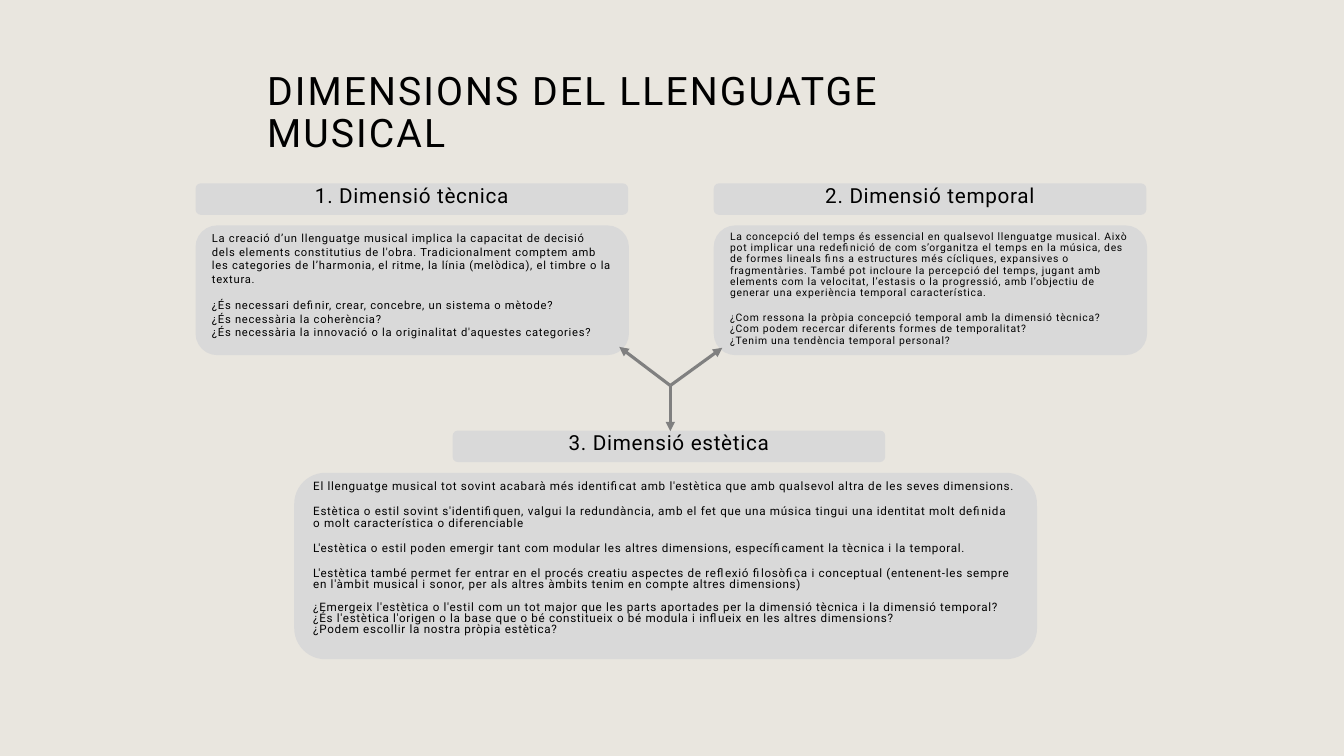
from dataclasses import dataclass

from pptx import Presentation, util as u
from pptx.dml.color import RGBColor
from pptx.enum import shapes, text
from pptx.oxml.ns import qn
from lxml import etree


@dataclass(frozen=True)
class Theme:
    back: str = "E9E6DF"
    card: str = "D9D9D9"
    ink: str = "000000"
    arrow: str = "808080"
    font: str = "Roboto"
    title: float = 28
    head: float = 14.8
    tech: float = 8
    time: float = 7.4
    style: float = 8.3


THEME = Theme()
LEFT, CENTER = text.PP_ALIGN.LEFT, text.PP_ALIGN.CENTER


def write(frame, words, size, first=False, align=LEFT, lead=1.0, gap=0, track=0.5):
    """Add one paragraph to a text frame."""
    para = frame.paragraphs[0] if first else frame.add_paragraph()
    para.alignment, para.line_spacing = align, lead
    para.space_before, para.space_after = u.Pt(gap), u.Pt(0)
    props = para._p.get_or_add_pPr()
    props.set("marL", "0")
    props.set("indent", "0")
    etree.SubElement(props, qn("a:buNone"))
    run = para.add_run()
    run.text = words
    run.font.name, run.font.size, run.font.bold = THEME.font, u.Pt(size), False
    run.font.color.rgb = RGBColor.from_string(THEME.ink)
    run._r.get_or_add_rPr().set("spc", str(round(track * 100)))


@dataclass
class Board:
    slide: object
    theme: Theme = THEME

    def place(self, shape, box):
        shape.left, shape.top, shape.width, shape.height = map(u.Pt, box)

    def frame(self, shape, anchor, top=3.6):
        frame = shape.text_frame
        frame.word_wrap = True
        frame.auto_size = text.MSO_AUTO_SIZE.NONE
        frame.vertical_anchor = anchor
        frame.margin_left = frame.margin_right = u.Pt(7.2)
        frame.margin_top, frame.margin_bottom = u.Pt(top), u.Pt(3.6)
        return frame

    def title(self, words, box):
        shape = self.slide.shapes.title
        self.place(shape, box)
        frame = self.frame(shape, text.MSO_ANCHOR.MIDDLE)
        write(frame, words, self.theme.title, first=True, lead=0.9, track=1.5)

    def card(self, box, slot=None, top=3.6):
        """Round a placeholder, or draw a new rounded shape."""
        if slot is None:
            kind = shapes.MSO_SHAPE.ROUNDED_RECTANGLE
            shape = self.slide.shapes.add_shape(kind, *map(u.Pt, box))
            shape.shadow.inherit = False
        else:
            shape = self.slide.placeholders[slot]
            self.place(shape, box)
            form = etree.SubElement(shape._element.spPr, qn("a:prstGeom"), prst="roundRect")
            etree.SubElement(form, qn("a:avLst"))
        shape.fill.solid()
        shape.fill.fore_color.rgb = RGBColor.from_string(self.theme.card)
        shape.line.fill.background()
        return self.frame(shape, text.MSO_ANCHOR.TOP, top)

    def head(self, words, box, slot=None):
        write(self.card(box, slot), words, self.theme.head,
              first=True, align=CENTER, lead=0.7, gap=10)

    def body(self, lines, box, size, lead, slot=None):
        """Fill a card with (gap before, words) pairs."""
        frame = self.card(box, slot, top=0)
        for i, (gap, words) in enumerate(lines):
            write(frame, words, size, first=i == 0, lead=lead, gap=gap)

    def arrow(self, start, end):
        line = self.slide.shapes.add_connector(
            shapes.MSO_CONNECTOR.STRAIGHT, *map(u.Pt, (*start, *end)))
        line.line.width = u.Pt(2.25)
        line.line.color.rgb = RGBColor.from_string(self.theme.arrow)
        etree.SubElement(line.line._get_or_add_ln(), qn("a:tailEnd"), type="triangle")
        etree.SubElement(line._element.spPr, qn("a:effectLst"))


# Wording
TECH = [
    (10, "La creació d’un llenguatge musical implica la capacitat de decisió dels elements "
         "constitutius de l'obra. Tradicionalment comptem amb les categories de l’harmonia, "
         "el ritme, la línia (melòdica), el timbre o la textura."),
    (9.4, "¿És necessari definir, crear, concebre, un sistema o mètode?"),
    (0, "¿És necessària la coherència?"),
    (0, "¿És necessària la innovació o la originalitat d'aquestes categories?"),
]
TIME = [
    (10, "La concepció del temps és essencial en qualsevol llenguatge musical. Això pot "
         "implicar una redefinició de com s’organitza el temps en la música, des de formes "
         "lineals fins a estructures més cícliques, expansives o fragmentàries. També pot "
         "incloure la percepció del temps, jugant amb elements com la velocitat, l’estasis o "
         "la progressió, amb l’objectiu de generar una experiència temporal característica."),
    (10, "¿Com ressona la pròpia concepció temporal amb la dimensió tècnica?"),
    (0, "¿Com podem recercar diferents formes de temporalitat?"),
    (0, "¿Tenim una tendència temporal personal?"),
]
STYLE = [
    (10, "El llenguatge musical tot sovint acabarà més identificat amb l'estètica que amb "
         "qualsevol altra de les seves dimensions."),
    (10, "Estètica o estil sovint s'identifiquen, valgui la redundància, amb el fet que una "
         "música tingui una identitat molt definida o molt característica o diferenciable"),
    (10, "L'estètica o estil poden emergir tant com modular les altres dimensions, "
         "específicament la tècnica i la temporal."),
    (10, "L'estètica també permet fer entrar en el procés creatiu aspectes de reflexió "
         "filosòfica i conceptual (entenent-les sempre en l'àmbit musical i sonor, per als "
         "altres àmbits tenim en compte altres dimensions)"),
    (8, "¿Emergeix l'estètica o l'estil com un tot major que les parts aportades per la "
        "dimensió tècnica i la dimensió temporal?"),
    (0, "¿És l'estètica l'origen o la base que o bé constitueix o bé modula i influeix en "
        "les altres dimensions?"),
    (0, "¿Podem escollir la nostra pròpia estètica?"),
]


def main():
    deck = Presentation()
    deck.slide_width, deck.slide_height = u.Pt(960), u.Pt(540)
    slide = deck.slides.add_slide(deck.slide_layouts.get_by_name("Comparison"))
    slide.background.fill.solid()
    slide.background.fill.fore_color.rgb = RGBColor.from_string(THEME.back)
    board = Board(slide)

    # Title
    board.title("DIMENSIONS DEL LLENGUATGE MUSICAL", (183.6, 41.8, 585.4, 79.2))

    # Two upper cards
    pair = [("1. Dimensió tècnica", TECH, 139.7, THEME.tech, 1.0),
            ("2. Dimensió temporal", TIME, 509.8, THEME.time, 0.9)]
    for i, (name, lines, left, size, lead) in enumerate(pair):
        board.head(name, (left, 131, 309, 22.5), slot=1 + 2 * i)
        board.body(lines, (left, 161, 309.6, 92.7), size, lead, slot=2 + 2 * i)

    # Lower card
    board.head("3. Dimensió estètica", (323.3, 307.6, 309, 22.5))
    board.body(STYLE, (210.2, 337.7, 530.6, 133.2), THEME.style, 0.8)

    # Arrows from the hub
    for end in [(442.3, 247.8), (516, 248.4), (478.8, 308)]:
        board.arrow((478.8, 275.4), end)

    deck.save("out.pptx")


if __name__ == "__main__":
    main()
